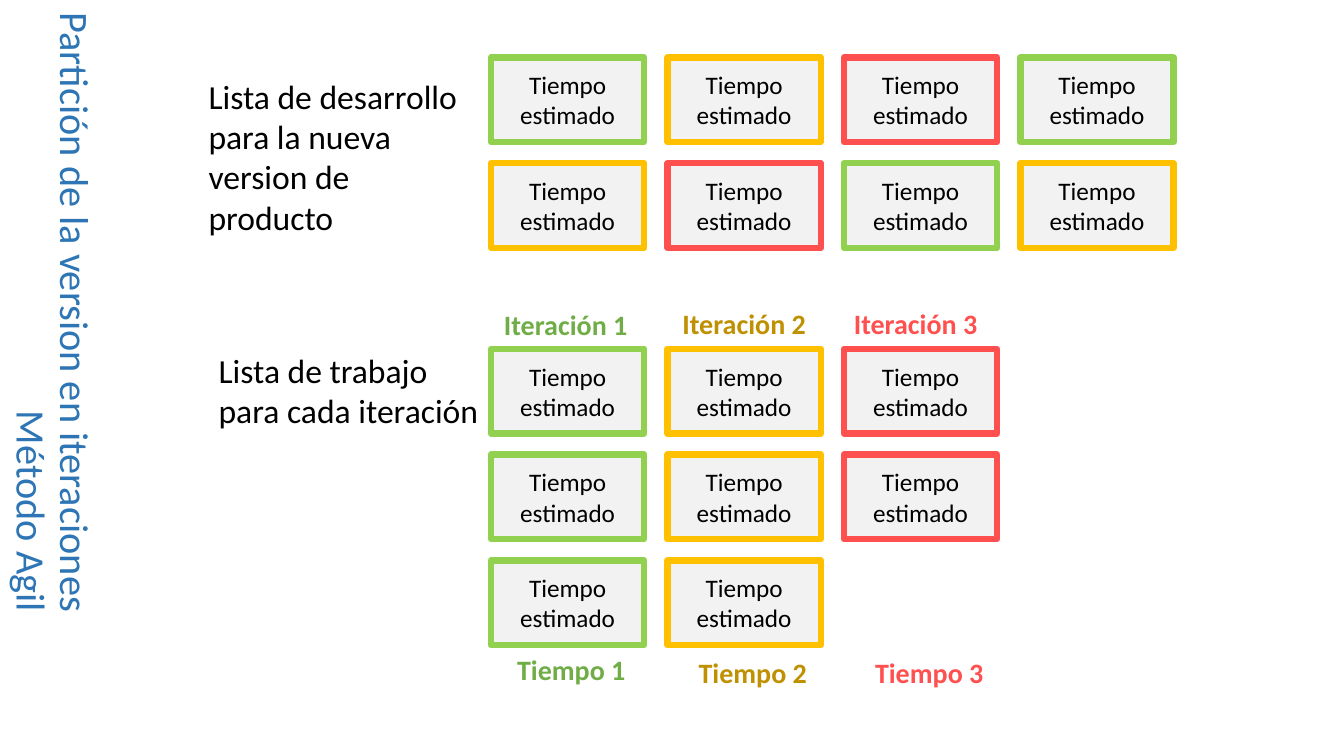
from pptx import Presentation
from pptx.dml.color import RGBColor
from pptx.enum import shapes, text
from pptx.util import Inches, Pt

GREEN = RGBColor(0x92, 0xD0, 0x50)
AMBER = RGBColor(0xFF, 0xC0, 0x00)
RED = RGBColor(0xFF, 0x50, 0x50)
DARK_GREEN = RGBColor(0x70, 0xAD, 0x47)
DARK_AMBER = RGBColor(0xBF, 0x90, 0x00)
BLUE = RGBColor(0x2E, 0x75, 0xB5)
BLACK = RGBColor(0, 0, 0)
PALE_GRAY = RGBColor(0xF2, 0xF2, 0xF2)

HEADING = ["Partición de la version en iteraciones", "Método Agil"]
TASK = "Tiempo estimado"
BACKLOG = [[GREEN, AMBER, RED, GREEN], [AMBER, RED, GREEN, AMBER]]
ITERATIONS = [[GREEN, AMBER, RED], [GREEN, AMBER, RED], [GREEN, AMBER]]
BOARDS = [(0.57, BACKLOG), (3.46, ITERATIONS)]
DESCRIPTIONS = [
    (1.97, 0.7, 2.9, 1.72, ["Lista de desarrollo", "para la nueva version de producto"]),
    (2.07, 3.42, 2.9, 0.91, ["Lista de trabajo para cada iteración"]),
]
CAPTIONS = [
    ("Iteración 1", 4.9, 3.0, 1.44, DARK_GREEN),
    ("Iteración 2", 6.67, 2.99, 1.44, DARK_AMBER),
    ("Iteración 3", 8.37, 2.99, 1.44, RED),
    ("Tiempo 1", 5.03, 6.42, 1.29, DARK_GREEN),
    ("Tiempo 2", 6.83, 6.45, 1.29, DARK_AMBER),
    ("Tiempo 3", 8.58, 6.45, 1.29, RED),
]

GRID_LEFT, COLUMN_STEP, ROW_STEP = 4.87, 1.75, 1.05
TASK_WIDTH, TASK_HEIGHT = 1.52, 0.84


def write(paragraph, words, size, color, bold=False):
    run = paragraph.add_run()
    run.text = words
    run.font.name = "Calibri"
    run.font.size = Pt(size)
    run.font.bold = bold
    run.font.color.rgb = color


def add_text(slide, left, top, width, height, wrap=True):
    frame = slide.shapes.add_textbox(
        Inches(left), Inches(top), Inches(width), Inches(height)).text_frame
    frame.word_wrap = wrap
    return frame


def add_heading(slide):
    frame = add_text(slide, 0.05, 0, 0.92, 6.35)
    frame.margin_left = frame.margin_right = frame.margin_top = 0
    frame.margin_bottom = Inches(0.28)
    frame.vertical_anchor = text.MSO_ANCHOR.MIDDLE
    frame._txBody.bodyPr.set("vert", "vert")
    paragraph = frame.paragraphs[0]
    paragraph.alignment = text.PP_ALIGN.RIGHT
    paragraph.line_spacing = 0.9
    for index, line in enumerate(HEADING):
        if index:
            paragraph.add_line_break()
        write(paragraph, line, 28.8, BLUE)


def add_task(slide, left, top, color):
    task = slide.shapes.add_shape(
        shapes.MSO_SHAPE.RECTANGLE, Inches(left), Inches(top),
        Inches(TASK_WIDTH), Inches(TASK_HEIGHT))
    task.shadow.inherit = False
    task.fill.solid()
    task.fill.fore_color.rgb = PALE_GRAY
    task.line.color.rgb = color
    task.line.width = Pt(4.5)
    frame = task.text_frame
    frame.word_wrap = True
    frame.vertical_anchor = text.MSO_ANCHOR.MIDDLE
    frame.paragraphs[0].alignment = text.PP_ALIGN.CENTER
    write(frame.paragraphs[0], TASK, 18, BLACK)


def main():
    deck = Presentation()
    deck.slide_width, deck.slide_height = Inches(13.33), Inches(7.5)
    slide = deck.slides.add_slide(deck.slide_layouts[6])
    add_heading(slide)
    for board_top, rows in BOARDS:
        for row, colors in enumerate(rows):
            for column, color in enumerate(colors):
                add_task(slide, GRID_LEFT + column * COLUMN_STEP,
                         board_top + row * ROW_STEP, color)
    for left, top, width, height, lines in DESCRIPTIONS:
        frame = add_text(slide, left, top, width, height)
        for index, line in enumerate(lines):
            paragraph = frame.add_paragraph() if index else frame.paragraphs[0]
            write(paragraph, line, 24, BLACK)
    for caption, left, top, width, color in CAPTIONS:
        frame = add_text(slide, left, top, width, 0.44, wrap=False)
        write(frame.paragraphs[0], caption, 20, color, bold=True)
    deck.save("out.pptx")


if __name__ == "__main__":
    main()
